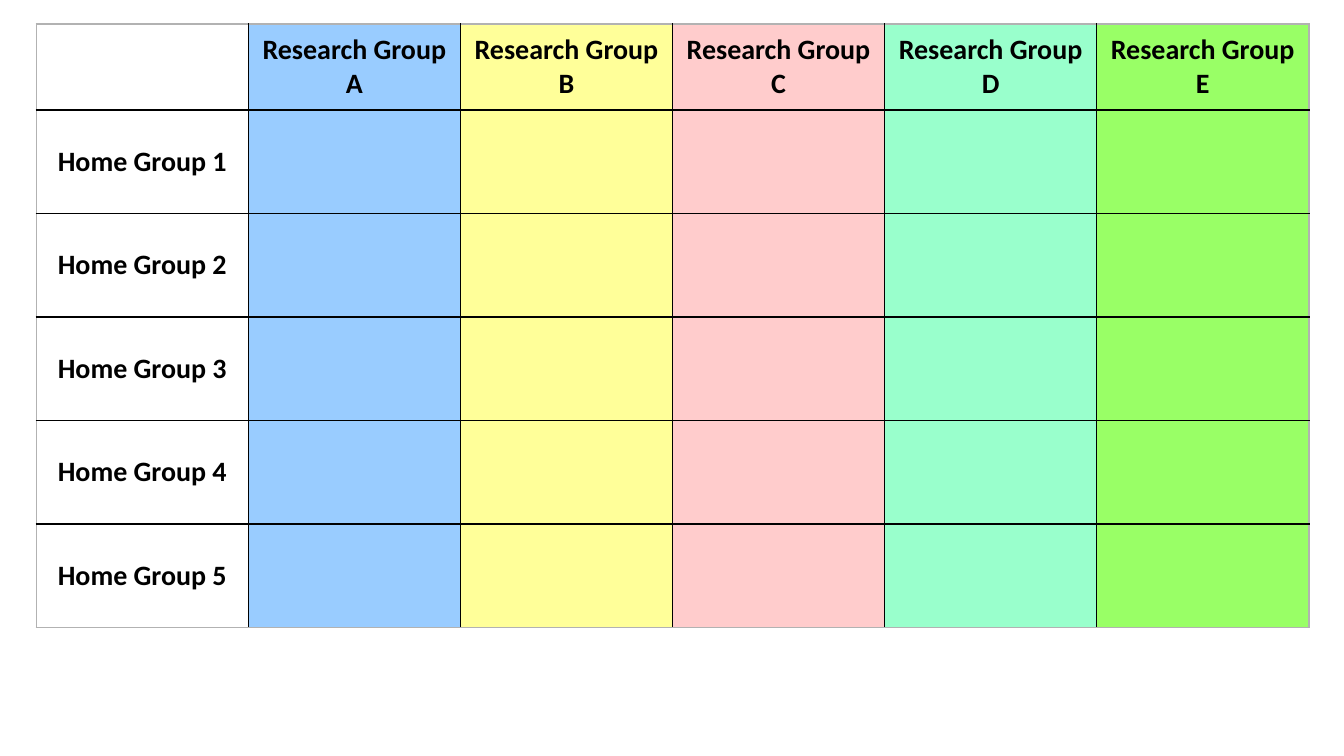
from lxml.etree import SubElement
from pptx import Presentation
from pptx.dml.color import RGBColor
from pptx.enum.text import MSO_ANCHOR, PP_ALIGN
from pptx.oxml.ns import qn
from pptx.util import Inches, Pt

COLORS = {
    "text": "000000",
    "grid": "000000",
    "frame": "B2B2B2",
    "label": "FFFFFF",
    "A": "99CCFF",
    "B": "FFFF99",
    "C": "FFCCCC",
    "D": "99FFCC",
    "E": "99FF66",
}
RESEARCH_GROUPS = "ABCDE"
HOME_GROUP_COUNT = 5
TABLE_WIDTH = 9.47
HEADER_HEIGHT = 0.64
ROW_HEIGHT = 0.77


def write_text(cell, text, size=15, font="Calibri", color="text", bold=True,
               align=PP_ALIGN.CENTER):
    paragraph = cell.text_frame.paragraphs[0]
    paragraph.alignment = align
    run = paragraph.add_run()
    run.text = text
    run.font.name = font
    run.font.size = Pt(size)
    run.font.bold = bold
    run.font.color.rgb = RGBColor.from_string(COLORS[color])


def set_borders(cell, edges):
    """Draw each edge; borders must precede the fill in the cell properties."""
    properties = cell._tc.get_or_add_tcPr()
    for position, (side, color) in enumerate(edges.items()):
        line = SubElement(properties, qn(f"a:ln{side}"), w=str(Pt(1)))
        fill = SubElement(line, qn("a:solidFill"))
        SubElement(fill, qn("a:srgbClr"), val=COLORS[color])
        properties.insert(position, line)


def format_cell(cell, color, edges):
    cell.fill.solid()
    cell.fill.fore_color.rgb = RGBColor.from_string(COLORS[color])
    cell.vertical_anchor = MSO_ANCHOR.MIDDLE
    cell.margin_left = cell.margin_right = Inches(0.08)
    cell.margin_top = cell.margin_bottom = Inches(0.04)
    set_borders(cell, edges)


def add_group_table(slide, left, top):
    row_count = HOME_GROUP_COUNT + 1
    column_count = len(RESEARCH_GROUPS) + 1
    height = HEADER_HEIGHT + HOME_GROUP_COUNT * ROW_HEIGHT
    # Columns share the table width equally
    table = slide.shapes.add_table(
        row_count, column_count, Inches(left), Inches(top),
        Inches(TABLE_WIDTH), Inches(height)).table
    table.horz_banding = False

    for index, row in enumerate(table.rows):
        row.height = Inches(ROW_HEIGHT if index else HEADER_HEIGHT)

    # Column colours, black inner grid and grey outer frame
    column_colors = ["label", *RESEARCH_GROUPS]
    for row in range(row_count):
        for column, color in enumerate(column_colors):
            on_frame = {
                "L": column == 0,
                "R": column == column_count - 1,
                "T": row == 0,
                "B": row == row_count - 1,
            }
            edges = {side: "frame" if outer else "grid"
                     for side, outer in on_frame.items()}
            format_cell(table.cell(row, column), color, edges)

    # Header row and label column
    for column, letter in enumerate(RESEARCH_GROUPS, start=1):
        write_text(table.cell(0, column), f"Research Group {letter}")
    for row in range(1, row_count):
        write_text(table.cell(row, 0), f"Home Group {row}")


def main():
    # Widescreen 16:9 slide
    presentation = Presentation()
    presentation.slide_width = Inches(10)
    presentation.slide_height = Inches(10) * 9 // 16
    blank_layout = presentation.slide_layouts[6]
    slide = presentation.slides.add_slide(blank_layout)
    add_group_table(slide, left=0.27, top=0.18)
    presentation.save("out.pptx")


if __name__ == "__main__":
    main()
